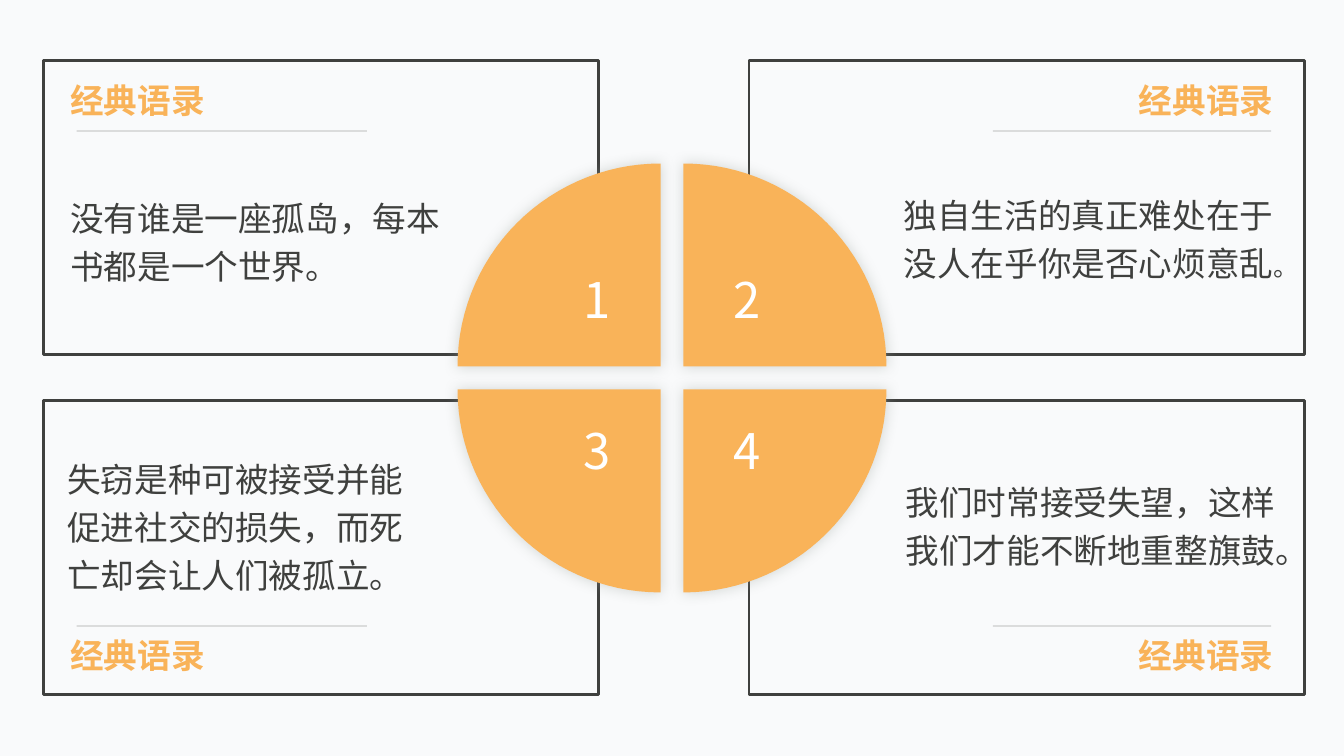
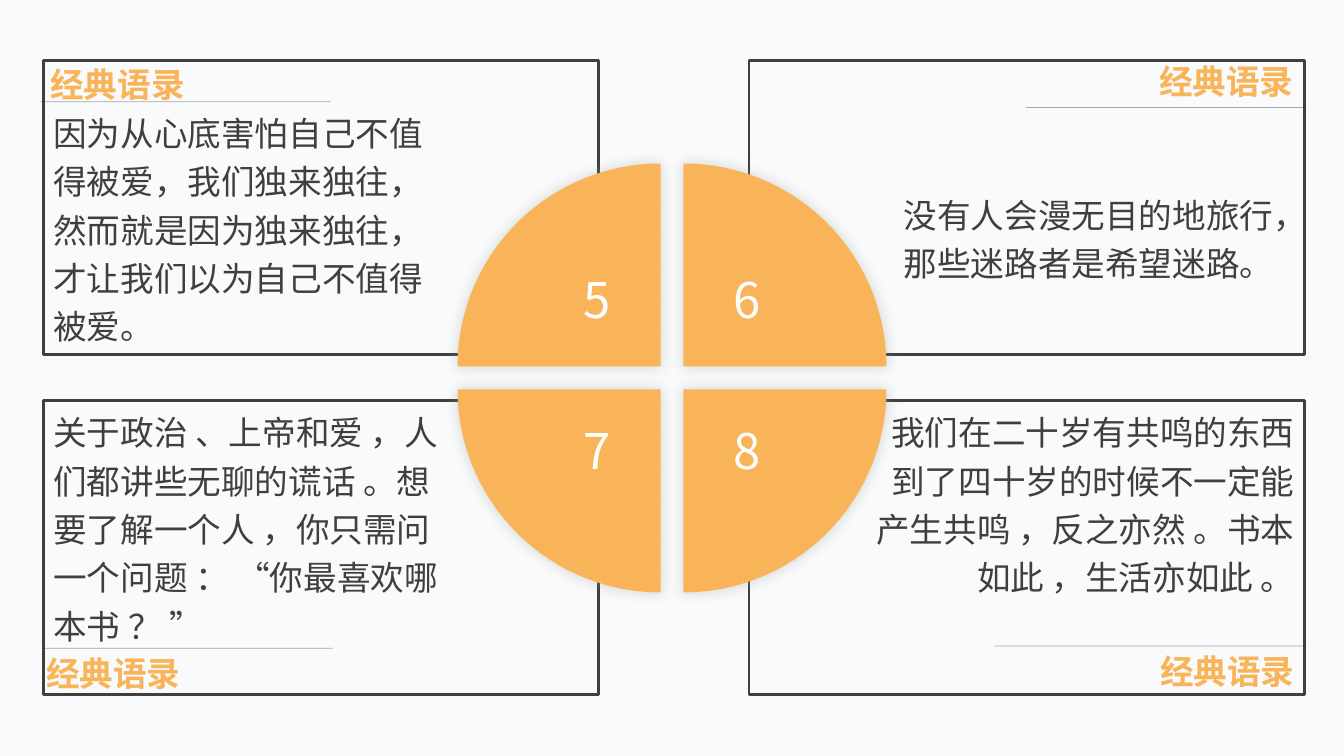
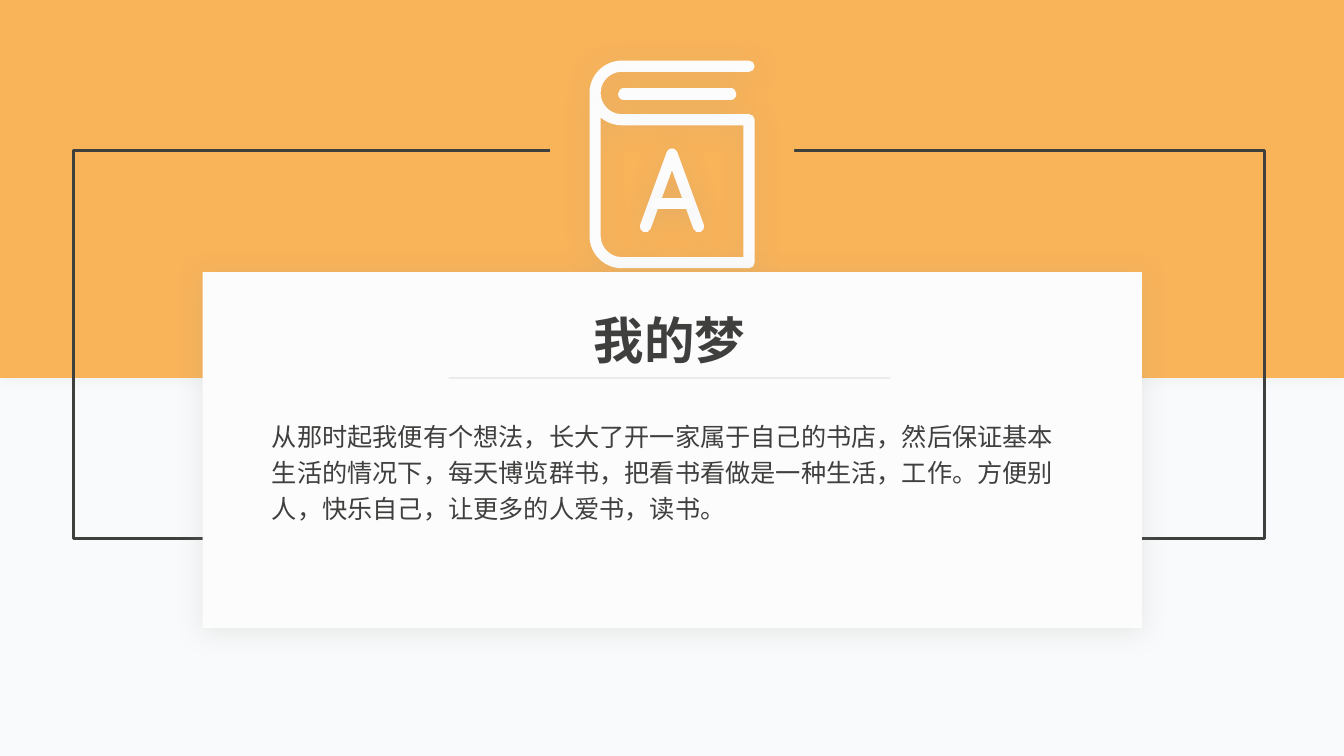
from dataclasses import dataclass
from math import cos, radians, sin

from lxml import etree
from pptx import Presentation
from pptx.dml.color import RGBColor
from pptx.enum.shapes import MSO_CONNECTOR, MSO_SHAPE
from pptx.enum.text import MSO_ANCHOR, MSO_AUTO_SIZE, PP_ALIGN
from pptx.oxml.ns import qn
from pptx.util import Pt

RECTANGLE = MSO_SHAPE.RECTANGLE
STRAIGHT = MSO_CONNECTOR.STRAIGHT
MIDDLE = MSO_ANCHOR.MIDDLE
FIT_TEXT = MSO_AUTO_SIZE.SHAPE_TO_FIT_TEXT
LEFT, CENTER, RIGHT = PP_ALIGN.LEFT, PP_ALIGN.CENTER, PP_ALIGN.RIGHT

FONT = "Noto Sans CJK SC"
PALE = RGBColor(0xF9, 0xFA, 0xFB)
ORANGE = RGBColor(0xF9, 0xB3, 0x59)
CHARCOAL = RGBColor(0x3F, 0x40, 0x3E)
NEAR_BLACK = RGBColor(0x26, 0x26, 0x26)
GRAY = RGBColor(0x96, 0x9F, 0x98)
LIGHT_GRAY = RGBColor(0xD5, 0xD7, 0xD5)
NEAR_WHITE = RGBColor(0xFC, 0xFC, 0xFD)
WHITE = RGBColor(0xFF, 0xFF, 0xFF)

WIDTH, HEIGHT = 960, 540
FRAME_LEFTS, FRAME_TOPS = (31, 535), (43.2, 285.84)
FRAME_WIDTH, FRAME_HEIGHT = 396.7, 210.2
RADIUS, HALF_GAP = 145, 8.2
OUTER_INSET, INNER_INSET = 73.4, 19.4
HEADING = "经典语录"
HEADING_SIZE = (111.6, 36)
ICON_STROKE = 8


@dataclass(frozen=True)
class Shadow:
    color: RGBColor
    opacity: int
    blur: float
    distance: float = 0
    direction: int = 0


@dataclass(frozen=True)
class Quote:
    text: str
    box: tuple[float, float, float, float]
    heading: tuple[float, float]
    rule: tuple[float, float, float]  # left, right, height on the slide
    small_ending: str = ""


GLOW = Shadow(GRAY, 40, 10)
BAND_GLOW = Shadow(LIGHT_GRAY, 40, 10)
DROP = Shadow(GRAY, 20, 20, 3, 90)

# Quotes run left to right, top to bottom
QUOTE_SLIDES = (
    (
        Quote("没有谁是一座孤岛，每本书都是一个世界。",
              (43.2, 131.8, 285.1, 74.2), (43.2, 53.3), (54.7, 262.1, 93.6)),
        Quote("独自生活的真正难处在于没人在乎你是否心烦意乱",
              (633.6, 129.6, 283, 77), (805, 53.3), (709.2, 907.9, 93.6), "。"),
        Quote("失窃是种可被接受并能促进社交的损失，而死亡却会让人们被孤立。",
              (41, 318.2, 277.9, 109.4), (43.2, 450), (54.7, 262.1, 447.1)),
        Quote("我们时常接受失望，这样我们才能不断地重整旗鼓。",
              (635, 334.8, 283, 74.2), (805, 450), (709.2, 907.9, 447.1)),
    ),
    (
        Quote("因为从心底害怕自己不值得被爱，我们独来独往，然而就是因为独来独往，"
              "才让我们以为自己不值得被爱。",
              (31, 71.3, 293, 181.4), (28.8, 41.8), (28.8, 236.2, 72.7)),
        Quote("没有人会漫无目的地旅行，那些迷路者是希望迷路。",
              (633.6, 129.6, 283, 74.2), (819.4, 40.3), (733, 931.7, 76.8)),
        Quote("关于政治 、上帝和爱 ，人们都讲些无聊的谎话 。想要了解一个人 ，"
              "你只需问一个问题 ： “你最喜欢哪本书 ？ ”",
              (31, 285.1, 303.8, 181.4), (25.9, 463), (31, 237.6, 463)),
        Quote("我们在二十岁有共鸣的东西到了四十岁的时候不一定能产生共鸣 ，"
              "反之亦然 。书本如此 ，生活亦如此 。",
              (612.7, 285.1, 319, 146.9), (820.1, 461.5), (709.9, 931.7, 461.5)),
    ),
)


# Effects
def set_opacity(color_element, percent: int) -> None:
    etree.SubElement(color_element, qn("a:alpha"), val=str(percent * 1000))


def set_shadow(shape, shadow: Shadow | None) -> None:
    properties = shape.element.spPr
    effects = properties.find(qn("a:effectLst"))
    if effects is None:
        effects = etree.SubElement(properties, qn("a:effectLst"))
    if shadow:
        outer = etree.SubElement(
            effects, qn("a:outerShdw"), blurRad=str(Pt(shadow.blur)),
            dist=str(Pt(shadow.distance)), dir=str(shadow.direction * 60000),
            algn="ctr", rotWithShape="0")
        color = etree.SubElement(outer, qn("a:srgbClr"), val=str(shadow.color))
        set_opacity(color, shadow.opacity)


def paint(shape, fill=None, line=None, line_width=2.0, shadow=None) -> None:
    if fill is None:
        shape.fill.background()
    else:
        shape.fill.solid()
        shape.fill.fore_color.rgb = fill
    if line is None:
        shape.line.fill.background()
    else:
        shape.line.color.rgb = line
        shape.line.width = Pt(line_width)
    shape.shadow.inherit = False
    set_shadow(shape, shadow)


# Text
def write_text(frame, text: str, *, size: float, color=CHARCOAL, bold=False,
               alignment=LEFT, line_spacing=1.0, wrap=True, small_ending="") -> None:
    frame.word_wrap = wrap
    paragraph = frame.paragraphs[0]
    paragraph.alignment = alignment
    paragraph.line_spacing = line_spacing
    for words, points in ((text, size), (small_ending, 18)):
        if words:
            run = paragraph.add_run()
            run.text = words
            run.font.size = Pt(points)
            run.font.bold = bold
            run.font.color.rgb = color
            run.font.name = FONT
            etree.SubElement(run.font._element, qn("a:ea"), typeface=FONT)


def add_text(slide, box, text: str, **style) -> None:
    frame = slide.shapes.add_textbox(*map(Pt, box)).text_frame
    write_text(frame, text, **style)
    frame.auto_size = FIT_TEXT


# Shapes
def add_rectangle(slide, box, **style) -> None:
    paint(slide.shapes.add_shape(RECTANGLE, *map(Pt, box)), **style)


def add_line(slide, left, right, height, *, color, width=0.5, opacity=100, shadow=None):
    line = slide.shapes.add_connector(STRAIGHT, Pt(left), Pt(height), Pt(right), Pt(height))
    line.line.color.rgb = color
    line.line.width = Pt(width)
    if opacity < 100:
        set_opacity(next(line.get_or_add_ln().iter(qn("a:srgbClr"))), opacity)
    set_shadow(line, shadow)
    return line


def arc(center_x: float, center_y: float, radius: float, start: int, end: int, steps=30):
    angles = [radians(start + (end - start) * step / steps) for step in range(steps + 1)]
    return [(center_x + radius * cos(angle), center_y + radius * sin(angle))
            for angle in angles]


def add_outline(slide, points, close: bool):
    scaled = [(Pt(x), Pt(y)) for x, y in points]
    builder = slide.shapes.build_freeform(*scaled[0])
    builder.add_line_segments(scaled[1:], close=close)
    return builder.convert_to_shape()


def round_ends(shape) -> None:
    line = shape.get_or_add_ln()
    line.set("cap", "rnd")
    etree.SubElement(line, qn("a:round"))


def add_quarter(slide, column: int, row: int, number: int) -> None:
    side_x, side_y = 2 * column - 1, 2 * row - 1
    corner = (WIDTH / 2 + side_x * HALF_GAP, HEIGHT / 2 + side_y * HALF_GAP)
    start = {(0, 0): 180, (1, 0): 270, (1, 1): 0, (0, 1): 90}[column, row]
    quarter = add_outline(slide, [corner, *arc(*corner, RADIUS, start, start + 90)], True)
    paint(quarter, fill=ORANGE, shadow=GLOW)
    frame = quarter.text_frame
    insets = (OUTER_INSET, INNER_INSET)
    frame.margin_left, frame.margin_right = Pt(insets[column]), Pt(insets[1 - column])
    frame.margin_top, frame.margin_bottom = Pt(insets[row]), Pt(insets[1 - row])
    frame.vertical_anchor = MIDDLE
    write_text(frame, str(number), size=35, color=WHITE, alignment=CENTER, line_spacing=0.9)


# Slides
def add_slide(presentation):
    slide = presentation.slides.add_slide(presentation.slide_layouts[6])
    slide.background.fill.solid()
    slide.background.fill.fore_color.rgb = PALE
    return slide


def add_quote_slide(presentation, quotes, first_number: int) -> None:
    slide = add_slide(presentation)
    for top in FRAME_TOPS:
        for left in FRAME_LEFTS:
            add_rectangle(slide, (left, top, FRAME_WIDTH, FRAME_HEIGHT), line=CHARCOAL)
    for index, quote in enumerate(quotes):
        row, column = divmod(index, 2)
        alignment = (LEFT, RIGHT)[column]
        add_quarter(slide, column, row, first_number + index)
        add_text(slide, quote.box, quote.text, size=24, alignment=alignment,
                 line_spacing=1.2, small_ending=quote.small_ending)
        add_text(slide, quote.heading + HEADING_SIZE, HEADING, size=24, color=ORANGE,
                 bold=True, alignment=alignment, wrap=False)
        add_line(slide, *quote.rule, color=NEAR_BLACK, opacity=40)


def add_book_icon(slide) -> None:
    left, right, radius = 444.2, 535, 19.1
    cover = [(right, 47.3), *arc(left, 66.4, radius, 270, 180),
             *arc(left, 168.5, radius, 180, 90), (right, 187.6), (right, 85.5),
             *arc(left, 66.4, radius, 90, 180)]
    letter = [(461, 162), (480, 110), (499, 162)]
    for points in (cover, letter):
        stroke = add_outline(slide, points, False)
        paint(stroke, line=NEAR_WHITE, line_width=ICON_STROKE, shadow=DROP)
        round_ends(stroke)
    for page_or_bar in ((445.5, 522, 67.2), (469, 491, 145.6)):
        round_ends(add_line(slide, *page_or_bar, color=NEAR_WHITE, width=ICON_STROKE,
                            shadow=DROP))


def add_dream_slide(presentation) -> None:
    slide = add_slide(presentation)
    add_rectangle(slide, (0, 0, WIDTH, HEIGHT / 2), fill=ORANGE, shadow=BAND_GLOW)
    add_rectangle(slide, (52.6, 107.3, 850.5, 277.2), line=CHARCOAL)
    add_rectangle(slide, (393, 0, 174.2, 214.6), fill=ORANGE)
    add_book_icon(slide)
    add_rectangle(slide, (144.7, 194.4, 671, 254.2), fill=NEAR_WHITE, shadow=DROP)
    add_text(slide, (187.2, 293, 582.5, 110.2),
             "从那时起我便有个想法，长大了开一家属于自己的书店，然后保证基本生活的情况下，"
             "每天博览群书，把看书看做是一种生活，工作。方便别人，快乐自己，让更多的人爱书，读书。",
             size=18, line_spacing=1.2)
    add_text(slide, (416.2, 217.4, 123.8, 51.1), "我的梦", size=36, bold=True,
             alignment=CENTER, wrap=False)
    add_line(slide, 320.4, 635.8, 270, color=GRAY, opacity=50)


def main() -> None:
    presentation = Presentation()
    presentation.slide_width, presentation.slide_height = Pt(WIDTH), Pt(HEIGHT)
    for index, quotes in enumerate(QUOTE_SLIDES):
        add_quote_slide(presentation, quotes, first_number=4 * index + 1)
    add_dream_slide(presentation)
    presentation.save("out.pptx")


if __name__ == "__main__":
    main()
